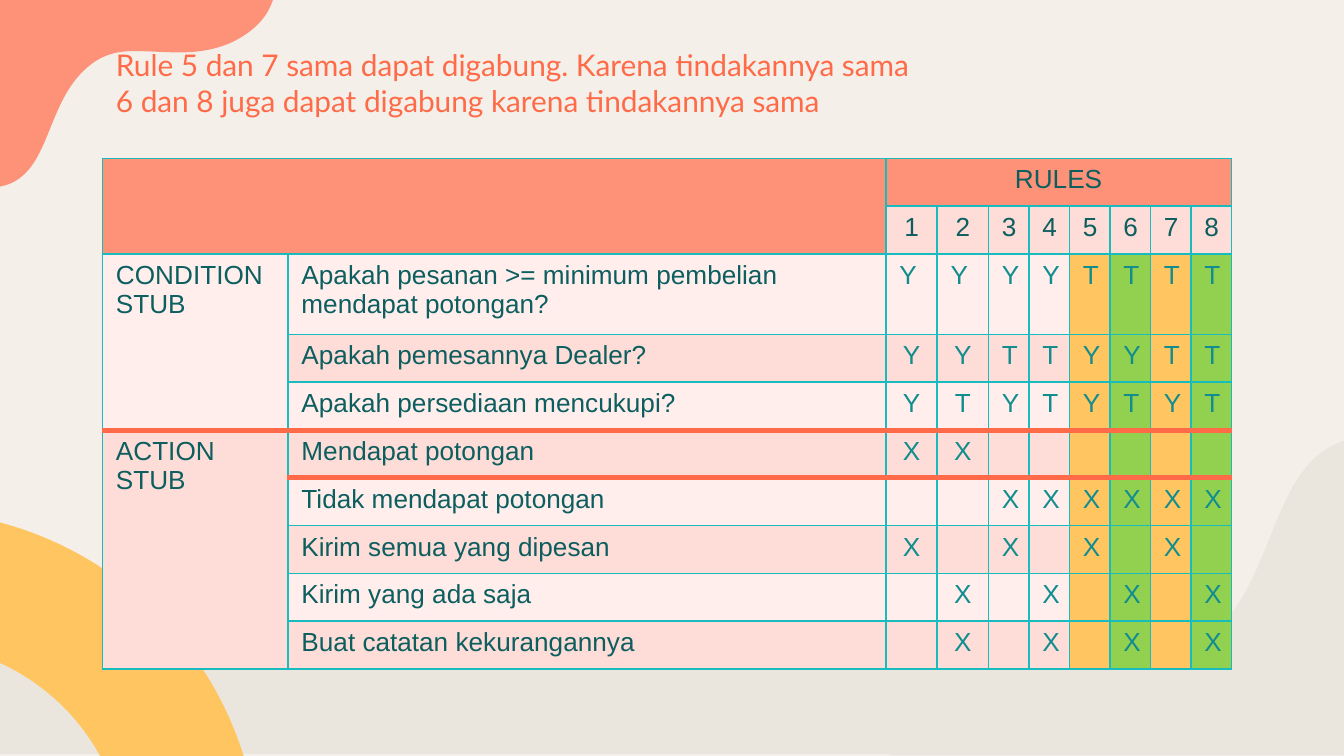
from lxml import etree
from pptx import Presentation
from pptx import util as u
from pptx.dml.color import RGBColor
from pptx.enum import shapes, text
from pptx.oxml import ns

CREAM = RGBColor(0xF4, 0xF0, 0xE9)
SAND = RGBColor(0xEB, 0xE6, 0xDD)
CORAL = RGBColor(0xFD, 0x92, 0x79)
ORANGE = RGBColor(0xFF, 0x6B, 0x48)
PINK = RGBColor(0xFE, 0xDC, 0xD7)
PALE_PINK = RGBColor(0xFF, 0xEE, 0xEC)
YELLOW = RGBColor(0xFF, 0xC5, 0x61)
GREEN = RGBColor(0x92, 0xD0, 0x50)
TURQUOISE = RGBColor(0x18, 0xBC, 0xBE)
TEAL = RGBColor(0x12, 0x8D, 0x8E)
DARK_TEAL = RGBColor(0x0C, 0x5E, 0x5F)

NOTES = ["Rule 5 dan 7 sama dapat digabung. Karena tindakannya sama",
         "6 dan 8 juga dapat digabung karena tindakannya sama"]

# One mark per rule; a dot leaves the cell empty.
DECISIONS = [
    ("Apakah pesanan >= minimum pembelian mendapat potongan?", "YYYYTTTT"),
    ("Apakah pemesannya Dealer?", "YYTTYYTT"),
    ("Apakah persediaan mencukupi?", "YTYTYTYT"),
    ("Mendapat potongan", "XX......"),
    ("Tidak mendapat potongan", "..XXXXXX"),
    ("Kirim semua yang dipesan", "X.X.X.X."),
    ("Kirim yang ada saja", ".X.X.X.X"),
    ("Buat catatan kekurangannya", ".X.X.X.X"),
]
HEADER_ROWS, LABEL_COLUMNS, RULES = 2, 2, 8
FIRST_ACTION = 5
MERGES = [(0, 0, 1, 1), (0, 2, 0, 9), (2, 0, 4, 0), (5, 0, 9, 0)]
COLUMN_WIDTHS = [99.4, 320.3] + [27.5] * 2 + [21.7] * 6
ROW_HEIGHTS = [25.6] * 2 + [43.2] + [25.6] * 7

# Each outline: start point, Bézier triples, then the straight corners.
CORNER_BLOB = ((0, 100), [
    ((26.6, 95), (23.8, 58.3), (44.6, 38.2)),
    ((54, 28.8), (63.4, 27.4), (72, 27.4)),
    ((79.9, 27.4), (87.8, 28.1), (96.5, 28.1)),
    ((103.7, 28.1), (112.3, 27.4), (121.7, 23.8)),
    ((135.4, 18), (143.3, 9.4), (146.2, 0))], [(0, 0)])
HILL = ((725.8, 234.7), [
    ((680.4, 243.4), (686.2, 306), (649.4, 340.6)),
    ((633.6, 355.7), (618.5, 359.3), (603.4, 359.3)),
    ((590.4, 359.3), (577.4, 357.1), (562.3, 357.1)),
    ((549.4, 357.1), (535, 358.6), (518.4, 365)),
    ((496.1, 373.7), (482.4, 388.8), (476.6, 404.6))], [(725.8, 404.6)])
UNITS = 100  # outline units per point


class SlideBuilder:
    def __init__(self, slide):
        self.slide = slide
        self.heading_font, self.heading_size = "Lato", 16
        self.table_font, self.table_size = "Arial", 14

    def background(self, color):
        self.slide.background.fill.solid()
        self.slide.background.fill.fore_color.rgb = color

    def paint(self, shape, color):
        shape.shadow.inherit = False
        shape.fill.solid()
        shape.fill.fore_color.rgb = color
        shape.line.fill.background()

    def preset(self, kind, left, top, width, height, color):
        shape = self.slide.shapes.add_shape(
            kind, u.Pt(left), u.Pt(top), u.Pt(width), u.Pt(height))
        self.paint(shape, color)
        return shape

    def curved_outline(self, outline, color):
        """Build the outline through its end points, then bend its first sides."""
        start, curves, corners = outline
        points = [start] + [curve[-1] for curve in curves] + corners
        scaled = [(x * UNITS, y * UNITS) for x, y in points]
        builder = self.slide.shapes.build_freeform(*scaled[0], scale=u.Pt(1) / UNITS)
        builder.add_line_segments(scaled[1:], close=True)
        shape = builder.convert_to_shape()
        left, top = (min(axis) for axis in zip(*points))
        sides = list(shape.element.iter(ns.qn("a:lnTo")))
        for side, curve in zip(sides, curves):
            bend = etree.Element(ns.qn("a:cubicBezTo"))
            for x, y in curve:
                etree.SubElement(bend, ns.qn("a:pt"), x=str(round((x - left) * UNITS)),
                                 y=str(round((y - top) * UNITS)))
            side.getparent().replace(side, bend)
        self.paint(shape, color)

    def body(self, lines, left, top, width, height):
        shape = self.slide.placeholders[1]
        shape.left, shape.top = u.Pt(left), u.Pt(top)
        shape.width, shape.height = u.Pt(width), u.Pt(height)
        shape.element.getparent().append(shape.element)  # in front of the decoration
        frame = shape.text_frame
        frame.auto_size = text.MSO_AUTO_SIZE.NONE
        frame.margin_top = frame.margin_bottom = u.Pt(7.2)
        frame.text = "\n".join(lines)
        for paragraph in frame.paragraphs:
            paragraph.space_before = u.Pt(0)
            self.style(paragraph, self.heading_font, self.heading_size, ORANGE)
            properties = paragraph._p.get_or_add_pPr()
            properties.set("marL", "0")
            properties.set("indent", "0")
            properties.insert_element_before(
                etree.Element(ns.qn("a:buNone")), "a:tabLst", "a:defRPr", "a:extLst")

    def style(self, paragraph, name, size, color):
        paragraph.font.name = name
        paragraph.font.size = u.Pt(size)
        paragraph.font.color.rgb = color

    def table(self, left, top, widths, heights, merges):
        table = self.slide.shapes.add_table(
            len(heights), len(widths), u.Pt(left), u.Pt(top),
            u.Pt(sum(widths)), u.Pt(sum(heights))).table
        table.first_row = table.horz_banding = False
        for column, width in zip(table.columns, widths):
            column.width = u.Pt(width)
        for row, height in zip(table.rows, heights):
            row.height = u.Pt(height)
        for first_row, first_column, last_row, last_column in merges:
            table.cell(first_row, first_column).merge(table.cell(last_row, last_column))
        return table

    def cell(self, cell, words, fill, color, centered, borders):
        for side in ("L", "R", "T", "B"):
            self.border(cell, side, *borders.get(side, (TURQUOISE, 1)))
        cell.fill.solid()
        cell.fill.fore_color.rgb = fill
        if not words:
            cell.margin_top = cell.margin_bottom = 0
            return
        cell.text = words
        paragraph = cell.text_frame.paragraphs[0]
        if centered:
            paragraph.alignment = text.PP_ALIGN.CENTER
        self.style(paragraph, self.table_font, self.table_size, color)

    def border(self, cell, side, color, width):
        line = etree.SubElement(cell._tc.get_or_add_tcPr(), ns.qn(f"a:ln{side}"),
                                w=str(u.Pt(width)))
        solid = etree.SubElement(line, ns.qn("a:solidFill"))
        etree.SubElement(solid, ns.qn("a:srgbClr"), val=str(color))


def cell_words(row, column):
    labels = {(0, 2): "RULES", (2, 0): "CONDITION STUB", (FIRST_ACTION, 0): "ACTION STUB"}
    if row < HEADER_ROWS or column == 0:
        if row == 1 and column >= LABEL_COLUMNS:
            return str(column - LABEL_COLUMNS + 1)
        return labels.get((row, column), "")
    question, marks = DECISIONS[row - HEADER_ROWS]
    if column == 1:
        return question
    return marks[column - LABEL_COLUMNS].replace(".", "")


def cell_fill(row, column):
    if row == 0 or (row == 1 and column < LABEL_COLUMNS):
        return CORAL
    if row >= HEADER_ROWS and column >= 6:
        return GREEN if column % 2 else YELLOW
    if column == 0:
        return PINK if row >= FIRST_ACTION else PALE_PINK
    return PINK if row % 2 else PALE_PINK


def thick_borders(cell, row, column):
    """Orange lines above the actions and below the first of them."""
    lines = {FIRST_ACTION} if column == 0 else {FIRST_ACTION, FIRST_ACTION + 1}
    bottom = row + (cell.span_height if cell.is_merge_origin else 1)
    return {side: (ORANGE, 3) for side, line in (("T", row), ("B", bottom)) if line in lines}


def main():
    presentation = Presentation()
    presentation.slide_width, presentation.slide_height = u.Pt(720), u.Pt(405)
    slide = presentation.slides.add_slide(presentation.slide_layouts[1])
    title = slide.shapes.title.element
    title.getparent().remove(title)

    builder = SlideBuilder(slide)
    builder.background(CREAM)
    builder.curved_outline(CORNER_BLOB, CORAL)
    builder.preset(shapes.MSO_SHAPE.RECTANGLE, 0, 336.2, 720, 67.7, SAND)
    arc = builder.preset(shapes.MSO_SHAPE.BLOCK_ARC, -235.4, 273.6, 374.4, 374.4, YELLOW)
    arc.rotation = 60
    for index, value in enumerate((108, 15.14, 0.19)):
        arc.adjustments[index] = value
    builder.curved_outline(HILL, SAND)
    builder.body(NOTES, 54.9, 18, 614.9, 363.6)

    table = builder.table(54.9, 84.8, COLUMN_WIDTHS, ROW_HEIGHTS, MERGES)
    for row in range(len(ROW_HEIGHTS)):
        for column in range(LABEL_COLUMNS + RULES):
            cell = table.cell(row, column)
            is_mark = row >= HEADER_ROWS and column >= LABEL_COLUMNS
            builder.cell(cell, cell_words(row, column), cell_fill(row, column),
                         TEAL if is_mark else DARK_TEAL,
                         column >= LABEL_COLUMNS and row != HEADER_ROWS,
                         thick_borders(cell, row, column))
    presentation.save("out.pptx")


if __name__ == "__main__":
    main()
